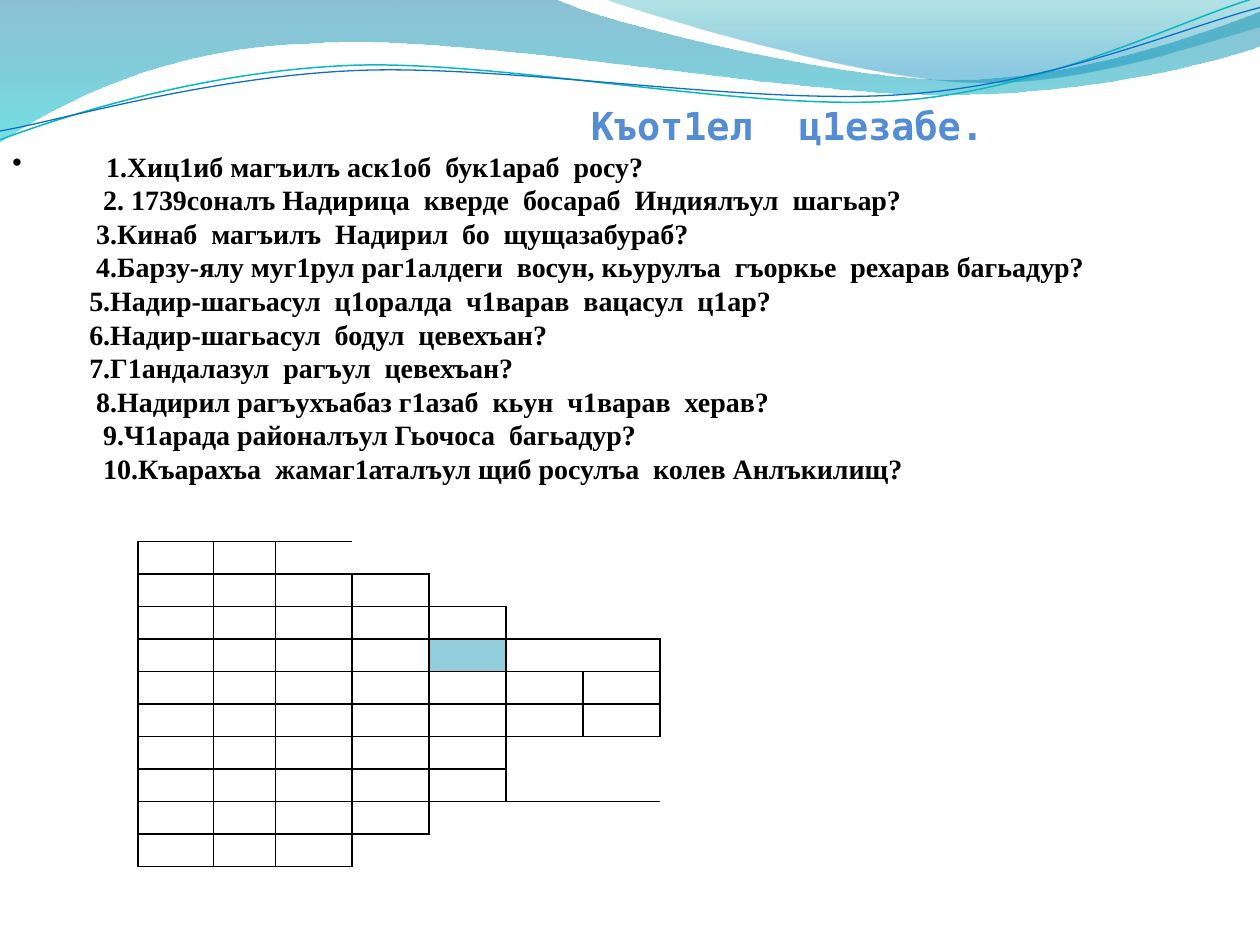
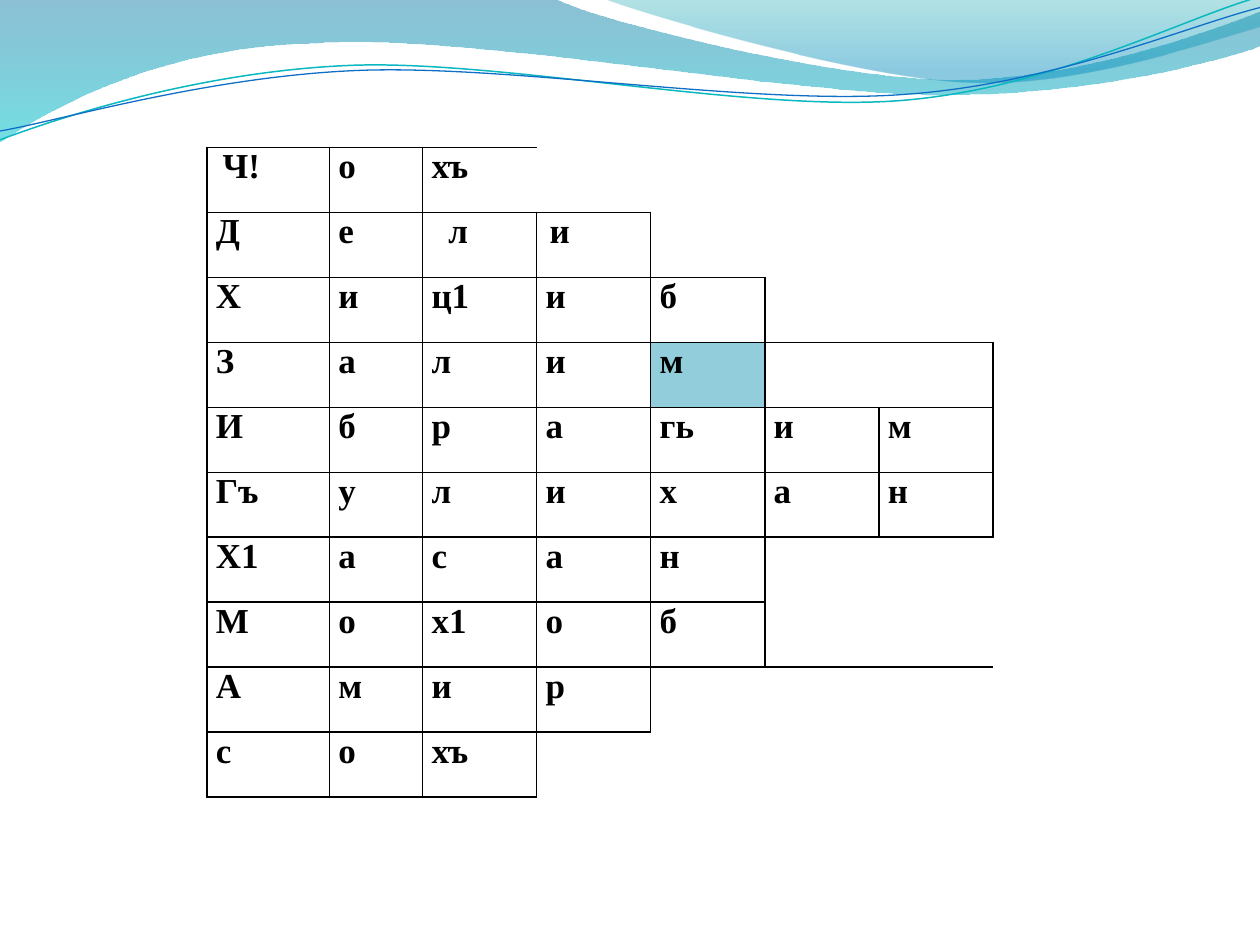
import pptx
import pptx.dml.color
import pptx.enum.text
import pptx.oxml.ns
import pptx.util
from lxml import etree

Cm = pptx.util.Cm
Pt = pptx.util.Pt
qn = pptx.oxml.ns.qn

COLORS = {
    "text": "000000", "title": "548DD4", "key": "92CDDC",
    "sea": "0074A1", "aqua": "00C6CF", "teal": "00A1A9", "sky": "008BBF",
    "line1": "0AB8BF", "line2": "0F6FC6",
}
SERIF = "Times New Roman"
MONO = "DejaVu Sans Mono"
UNIT = Cm(2.54)  # wave points are given in this unit
NO_STYLE = "{2D5ABB26-0587-4C30-8999-92F81FD0307C}"

# Each wave: a start point, then line ends (2 numbers) or curves (6 numbers)
BANDS = [
    ([(0, 0), (4.4, -0.01), (4.76, 0.17, 6.64, 0.63, 7.58, 0.63),
      (8.53, 0.63, 9.58, 0.26, 10, 0.09), (10.01, 0.36),
      (9.83, 0.44, 8.7, 0.76, 7.46, 0.75), (6.22, 0.75, 3.82, 0.28, 2.57, 0.34),
      (1.29, 0.36, 0.46, 0.83, -0.01, 1.13), (0, 0)],
     [(0, "sea", 45), (1, "aqua", 55)]),
    ([(4.79, -0.01), (5.09, 0.11, 6.82, 0.62, 7.69, 0.65),
      (8.56, 0.69, 9.61, 0.32, 10, 0.21), (10, 0), (4.79, -0.01)],
     [(0, "teal", 30), (0.8, "sky", 45)]),
]
LINES = [
    ([(0, 1.11), (0.48, 0.93, 1.58, 0.57, 2.77, 0.52),
      (3.95, 0.47, 5.93, 0.89, 7.13, 0.8), (8.33, 0.71, 9.38, 0.15, 9.98, -0.02)],
     "line1", 0.85),
    ([(0, 1.04), (0.47, 0.96, 1.64, 0.61, 2.83, 0.56),
      (4.03, 0.51, 5.97, 0.84, 7.17, 0.75), (8.36, 0.67, 9.41, 0.21, 10, 0.06)],
     "line2", 0.75),
]

# Left edge of each question in cm, and its words
QUESTIONS = [
    (2.14, "1.Хиц1иб магъилъ аск1об  бук1араб  росу?"),
    (2.08, "2. 1739соналъ Надирица  кверде  босараб  Индиялъул  шагьар?"),
    (1.94, "3.Кинаб  магъилъ  Надирил  бо  щущазабураб?"),
    (1.94, "4.Барзу-ялу муг1рул раг1алдеги  восун, кьурулъа  гъоркье  рехарав багьадур?"),
    (1.8, "5.Надир-шагьасул  ц1оралда  ч1варав  вацасул  ц1ар?"),
    (1.8, "6.Надир-шагьасул  бодул  цевехъан?"),
    (1.8, "7.Г1андалазул  рагъул  цевехъан?"),
    (1.94, "8.Надирил рагъухъабаз г1азаб  кьун  ч1варав  херав?"),
    (2.08, "9.Ч1арада районалъул Гьочоса  багьадур?"),
    (2.08, "10.Къарахъа  жамаг1аталъул щиб росулъа  колев Анлъкилищ?"),
]

ANSWERS = [row.split() for row in (
    "Ч! о хъ", "Д е л и", "Х и ц1 и б", "З а л и м", "И б р а гь и м",
    "Гъ у л и х а н", "Х1 а с а н", "М о х1 о б", "А м и р", "с о хъ")]
INDENTS = {(0, 0): 0.14, (1, 2): 0.34, (1, 3): 0.08}
KEY_CELL = (3, 4)
# Cells beside the words: row, column, rows, columns, drawn sides
FILLERS = [
    (0, 3, 1, 4, "B"), (1, 4, 1, 1, "LB"), (1, 5, 1, 2, ""), (2, 5, 1, 2, "LB"),
    (3, 5, 1, 2, "LRTB"), (6, 5, 2, 2, "LT"), (8, 4, 1, 3, "LT"),
    (9, 3, 1, 1, "LT"), (9, 4, 1, 3, ""),
]


def rgb(name):
    return pptx.dml.color.RGBColor.from_string(COLORS[name])


def add_wave(slide, wave, close):
    """Draw an outline through all points, then bend its curved parts."""
    points = [(part[i] * UNIT, part[i + 1] * UNIT)
              for part in wave for i in range(0, len(part), 2)]
    pen = slide.shapes.build_freeform(*points[0])
    pen.add_line_segments(points[1:], close=close)
    shape = pen.convert_to_shape()
    shape.shadow.inherit = False
    steps = iter(list(shape.element.iter(qn("a:lnTo"))))
    for part in wave[1:]:
        step = next(steps)
        if len(part) == 6:
            curve = etree.Element(qn("a:cubicBezTo"))
            step.addprevious(curve)
            for knot in (step, next(steps), next(steps)):
                curve.append(knot[0])
                knot.getparent().remove(knot)
    return shape


def add_waves(slide, master):
    """Draw the header waves and move them to the master."""
    waves = []
    for wave, stops in BANDS:
        shape = add_wave(slide, wave, True)
        shape.line.fill.background()
        shape.fill.gradient()
        shape.fill.gradient_angle = 270
        for stop, (place, color, alpha) in zip(shape.fill.gradient_stops, stops):
            stop.position = place
            stop.color.rgb = rgb(color)
        tints = shape.element.spPr.iter(qn("a:srgbClr"))
        for tint, (place, color, alpha) in zip(list(tints), stops):
            etree.SubElement(tint, qn("a:alpha"), val=str(alpha * 1000))
        waves.append(shape)
    for wave, color, width in LINES:
        shape = add_wave(slide, wave, False)
        shape.fill.background()
        shape.line.color.rgb = rgb(color)
        shape.line.width = Pt(width)
        waves.append(shape)
    for index, shape in enumerate(waves):
        shape.element.nvSpPr.cNvPr.id = 100 + index
        master.shapes.element.append(shape.element)


def set_para(para, text, face, size, color="text", left=0):
    para.text = text
    para.alignment = pptx.enum.text.PP_ALIGN.LEFT
    para.font.name = face
    para.font.size = Pt(size)
    para.font.bold = True
    para.font.color.rgb = rgb(color)
    props = para._p.get_or_add_pPr()
    props.set("marL", str(Cm(left)))
    return props


def add_quiz(slide, box):
    """Fill the title placeholder with the heading and its questions."""
    shape = slide.shapes.title
    shape.left, shape.top, shape.width, shape.height = (Cm(n) for n in box)
    frame = shape.text_frame
    frame.margin_left = frame.margin_right = frame.margin_bottom = 0
    frame.margin_top = Cm(2.05)
    frame.vertical_anchor = pptx.enum.text.MSO_ANCHOR.TOP
    frame.auto_size = pptx.enum.text.MSO_AUTO_SIZE.NONE
    frame.word_wrap = True
    set_para(frame.paragraphs[0], "Къот1ел  ц1езабе.", MONO, 22, "title", 11.91)
    for index, (left, text) in enumerate(QUESTIONS):
        para = frame.add_paragraph()
        props = set_para(para, text, SERIF, 16, left=left)
        para.line_spacing = Pt(19.2)
        para.space_before = Pt(0 if index else 0.8)
        # Only the first question has a bullet, near the slide's edge
        if index == 0:
            props.set("indent", str(Cm(0.25) - Cm(left)))
            bullet = etree.Element(qn("a:buChar"), char="•")
            props.find(qn("a:defRPr")).addprevious(bullet)


def set_cell(cell, sides, text="", indent=0, fill=None):
    props = cell._tc.get_or_add_tcPr()
    for side in "LRTB":
        edge = etree.SubElement(props, qn("a:ln" + side), w=str(Pt(1)))
        if side in sides:
            paint = etree.SubElement(edge, qn("a:solidFill"))
            etree.SubElement(paint, qn("a:srgbClr"), val=COLORS["text"])
        else:
            etree.SubElement(edge, qn("a:noFill"))
    if fill:
        cell.fill.solid()
        cell.fill.fore_color.rgb = rgb(fill)
    else:
        cell.fill.background()
    cell.margin_left = cell.margin_right = Cm(0.18)
    cell.margin_top = cell.margin_bottom = 0
    para = cell.text_frame.paragraphs[0]
    if text:
        set_para(para, text, SERIF, 20, left=indent)
    else:
        etree.SubElement(para._p, qn("a:endParaRPr"), sz="1000")


def add_grid(slide, box, widths, solved):
    """Draw the crossword, with its answers when solved."""
    frame = slide.shapes.add_table(len(ANSWERS), len(widths), *(Cm(n) for n in box))
    grid = frame.table
    grid.first_row = grid.horz_banding = False
    frame.element.find(".//" + qn("a:tableStyleId")).text = NO_STYLE
    for column, width in zip(grid.columns, widths):
        column.width = Cm(width)
    for row in grid.rows:
        row.height = Cm(box[3] / len(ANSWERS))
    # Letter cells
    for r, word in enumerate(ANSWERS):
        for c, letter in enumerate(word):
            set_cell(grid.cell(r, c), "LTB" if (r, c) == (0, 2) else "LRTB",
                     letter if solved else "", INDENTS.get((r, c), 0),
                     "key" if (r, c) == KEY_CELL else None)
    # Cells beside the words
    for r, c, tall, wide, sides in FILLERS:
        for y in range(r, r + tall):
            for x in range(c, c + wide):
                set_cell(grid.cell(y, x), sides)
        if tall * wide > 1:
            grid.cell(r, c).merge(grid.cell(r + tall - 1, c + wide - 1))


def main():
    deck = pptx.Presentation()
    deck.slide_width, deck.slide_height = Cm(25.4), Cm(19.05)

    # Questions with the empty crossword
    quiz = deck.slides.add_slide(deck.slide_layouts[5])
    add_waves(quiz, deck.slide_master)
    add_quiz(quiz, (0, 0, 24, 10.95))
    add_grid(quiz, (2.78, 10.92, 10.52, 6.55), [1.52, 1.25] + [1.55] * 5, False)

    # Solved crossword
    solved = deck.slides.add_slide(deck.slide_layouts[6])
    add_grid(solved, (4.17, 2.97, 15.87, 13.1), [2.47, 1.88] + [2.3] * 5, True)

    deck.save("out.pptx")


if __name__ == "__main__":
    main()
